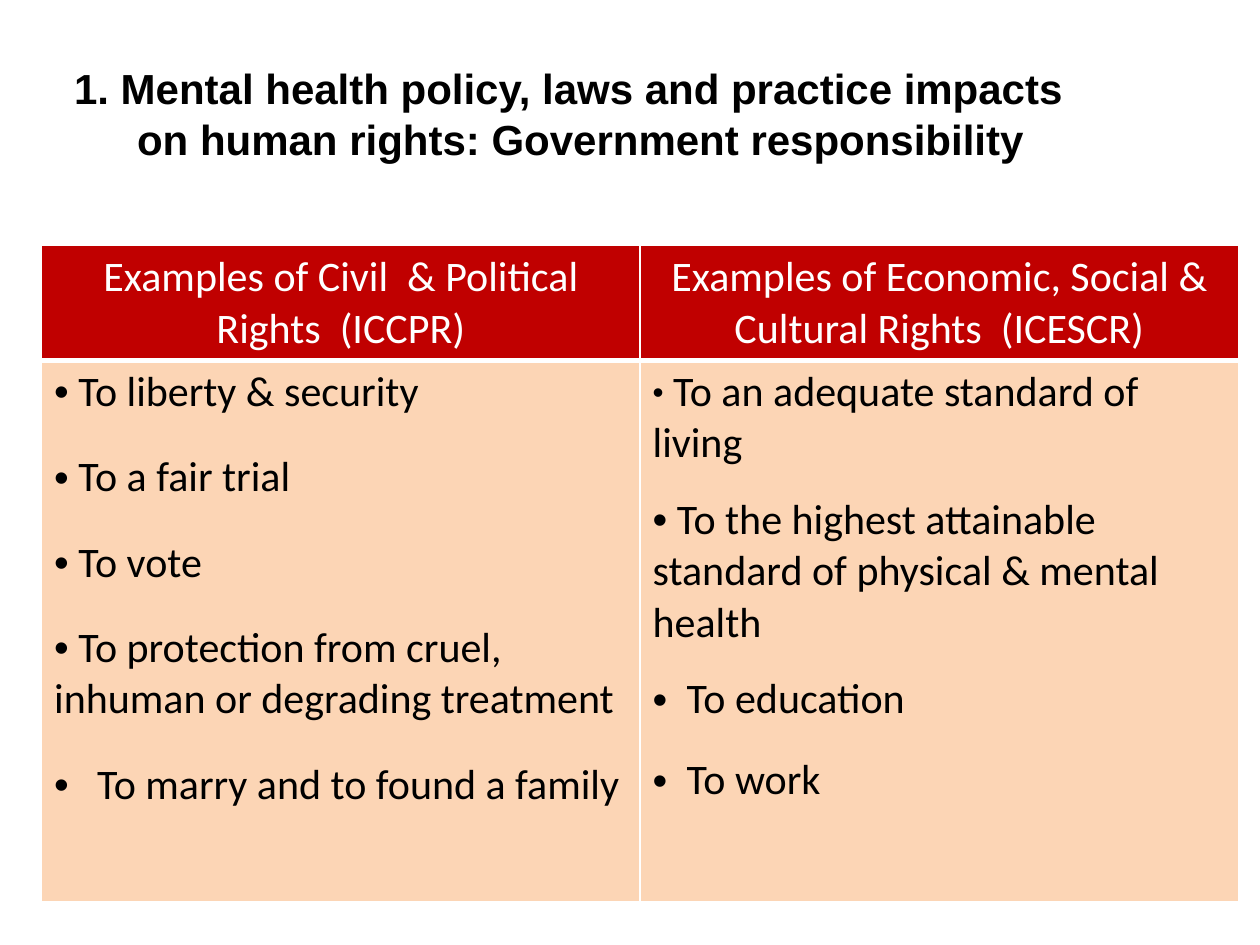
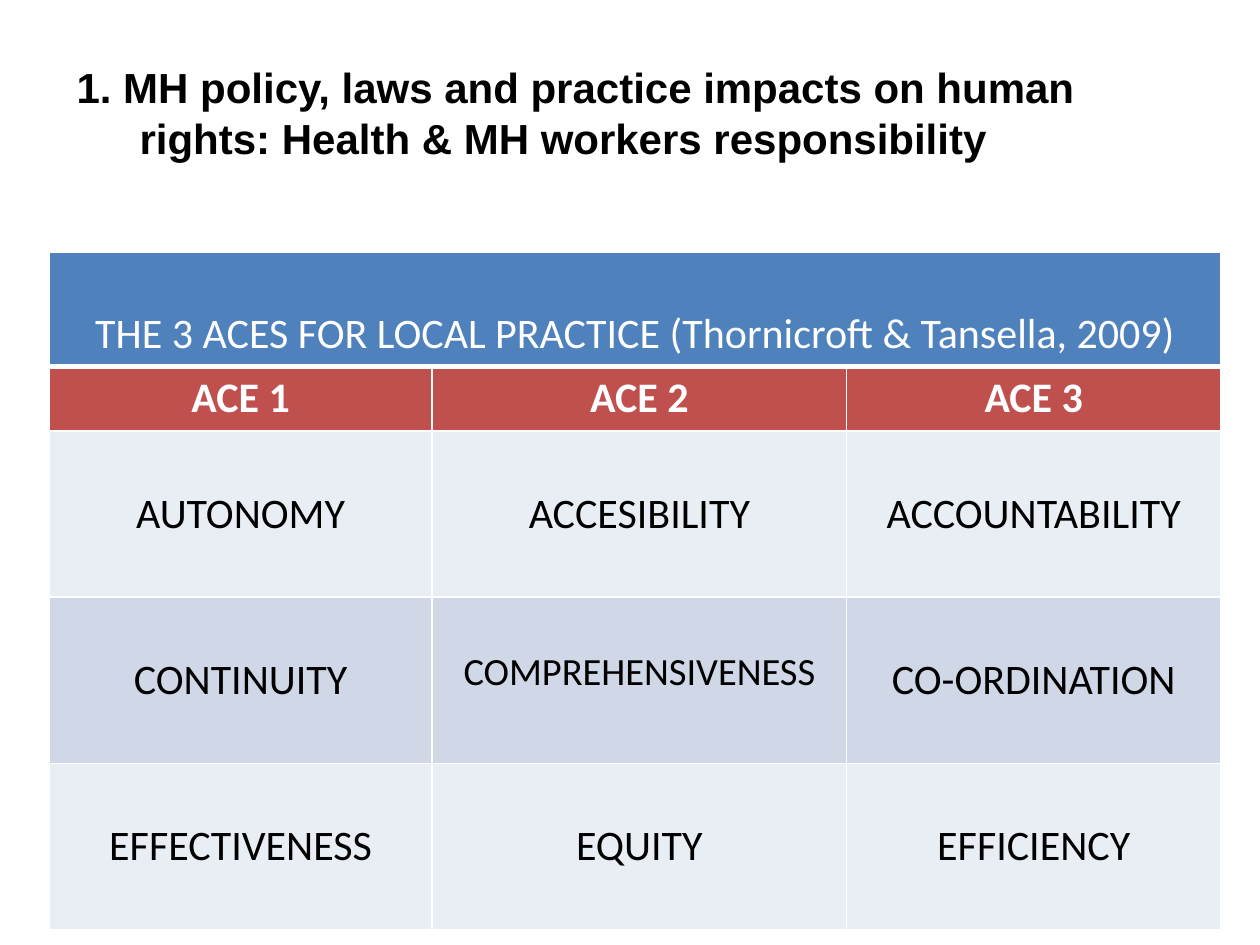
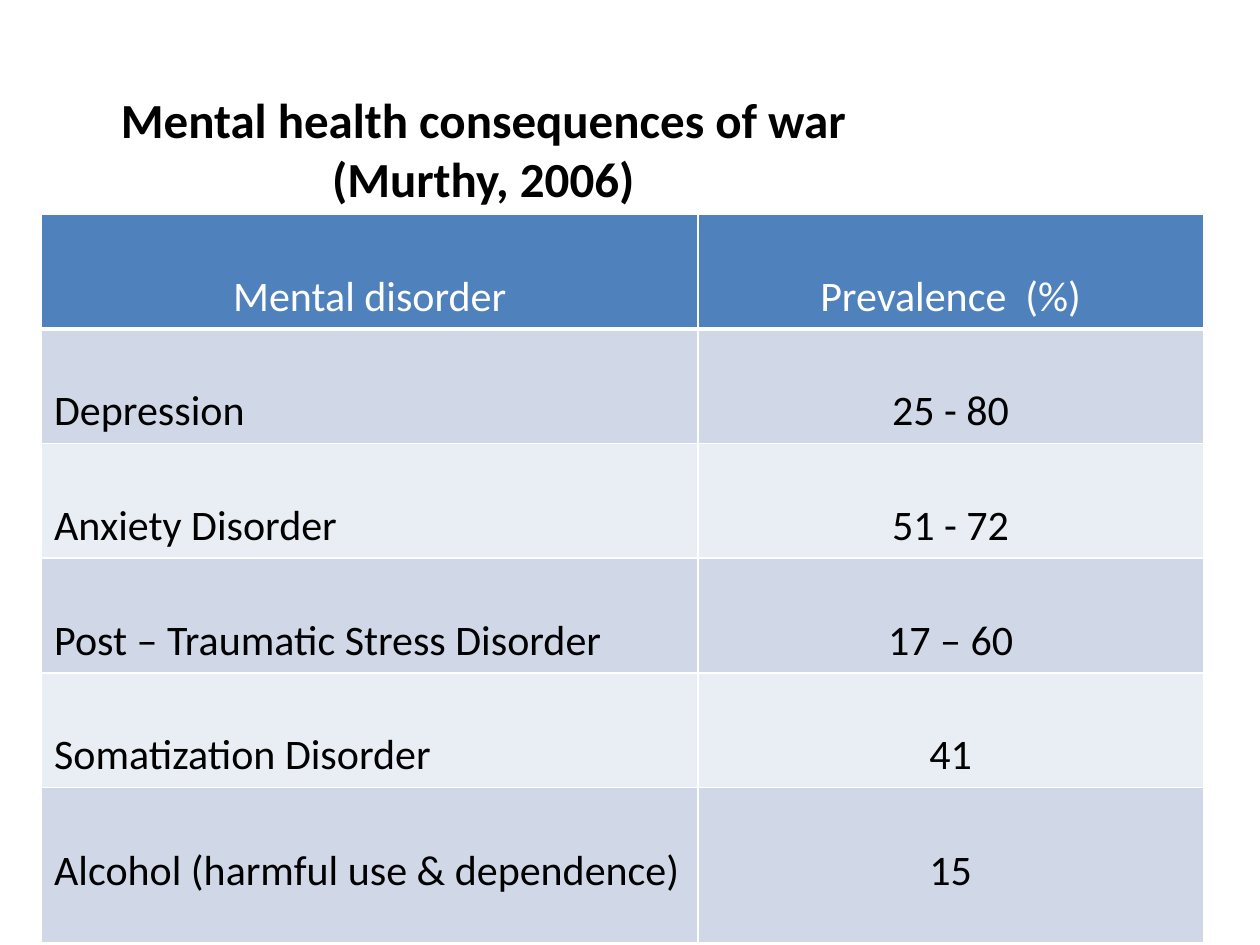
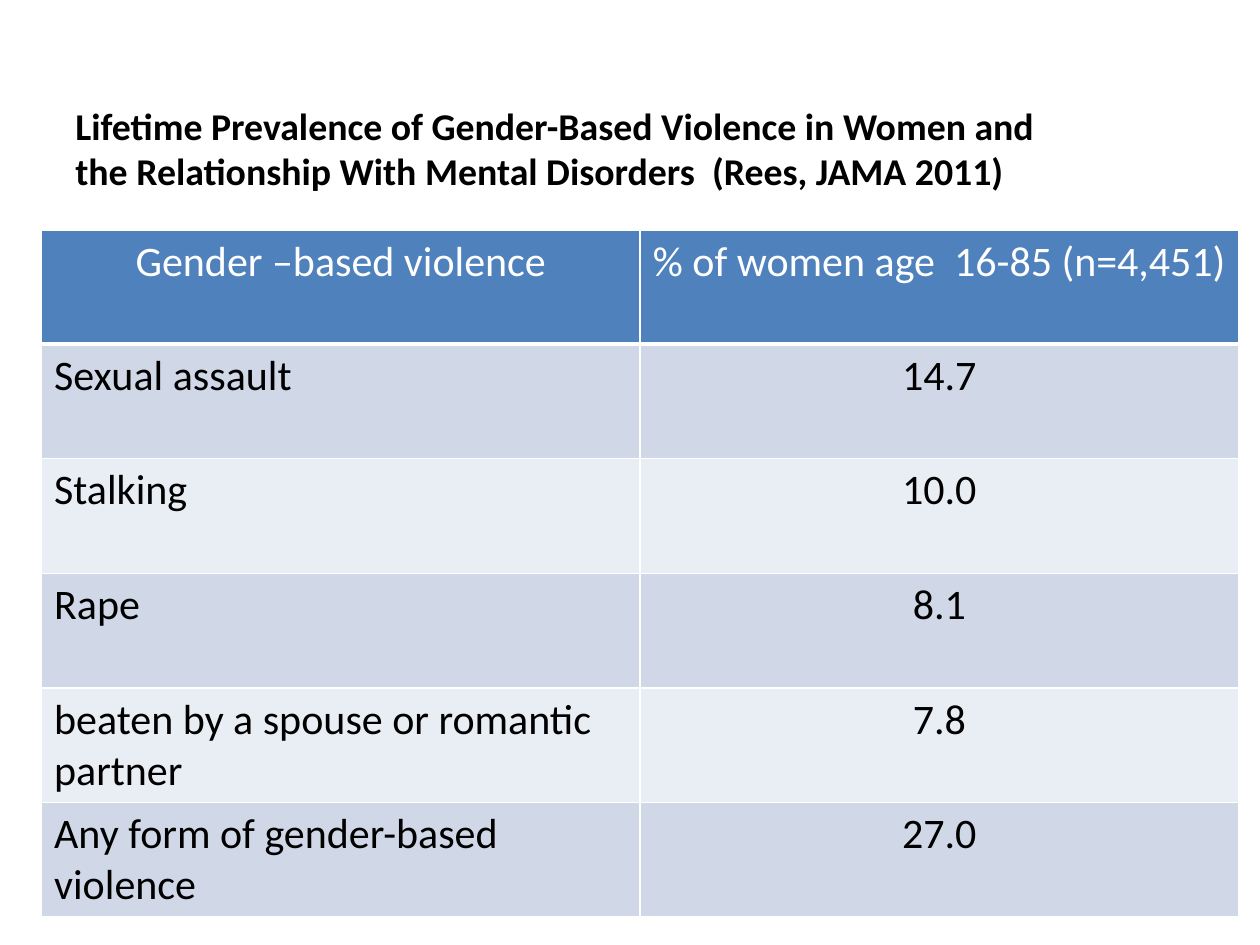
import pptx
import pptx.dml.color
import pptx.enum.text
import pptx.oxml.ns
import pptx.util
import lxml.etree

Inches = pptx.util.Inches
Pt = pptx.util.Pt
RGBColor = pptx.dml.color.RGBColor
ALIGN = pptx.enum.text.PP_ALIGN
ANCHOR = pptx.enum.text.MSO_ANCHOR
qn = pptx.oxml.ns.qn

BLACK = RGBColor(0x00, 0x00, 0x00)
WHITE = RGBColor(0xFF, 0xFF, 0xFF)
BLUE = RGBColor(0x4F, 0x81, 0xBD)
RED = RGBColor(0xC0, 0x50, 0x4D)
DARK_RED = RGBColor(0xC0, 0x00, 0x00)
PEACH = RGBColor(0xFC, 0xD5, 0xB5)
BAND_DARK = RGBColor(0xD0, 0xD8, 0xE8)
BAND_LIGHT = RGBColor(0xE9, 0xED, 0xF4)

BODY = {"name": "Calibri", "size": Pt(24), "bold": False, "color": BLACK}
HEADER = {**BODY, "color": WHITE}
SUBHEADER = {**HEADER, "bold": True}
NUMBERED_TITLE = {**BODY, "name": "Arial", "bold": True}


def write(paragraph, text, alignment, text_format):
    paragraph.alignment = alignment
    run = paragraph.add_run()
    run.text = text
    for name, value in text_format.items():
        if name == "color":
            run.font.color.rgb = value
        else:
            setattr(run.font, name, value)


def add_grid(slide, left, top, column_widths, row_heights, fills, anchors, texts):
    table = slide.shapes.add_table(
        len(row_heights), len(column_widths), Inches(left), Inches(top),
        Inches(sum(column_widths)), Inches(sum(row_heights))).table
    for column, width in zip(table.columns, column_widths):
        column.width = Inches(width)
    for row_index, (row, height) in enumerate(zip(table.rows, row_heights)):
        row.height = Inches(height)
        for column_index, cell in enumerate(row.cells):
            cell.fill.solid()
            cell.fill.fore_color.rgb = fills[row_index]
            cell.vertical_anchor = anchors[row_index]
            properties = cell._tc.get_or_add_tcPr()
            for position, side in enumerate(("lnL", "lnR", "lnT", "lnB")):
                width = 3 if row_index == 0 and side == "lnB" else 1
                border = lxml.etree.Element(qn("a:" + side), w=str(Pt(width)))
                solid = lxml.etree.SubElement(border, qn("a:solidFill"))
                lxml.etree.SubElement(solid, qn("a:srgbClr"), val=str(WHITE))
                properties.insert(position, border)
            if row_index < len(texts) and column_index < len(texts[row_index]):
                text = texts[row_index][column_index]
                is_label = len(column_widths) == 2 and row_index > 0 and column_index == 0
                text_format = {BLUE: HEADER, DARK_RED: HEADER, RED: SUBHEADER}.get(fills[row_index], BODY)
                write(cell.text_frame.paragraphs[0], text,
                      ALIGN.LEFT if is_label else ALIGN.CENTER, text_format)
    return table


presentation = pptx.Presentation()
presentation.slide_width = Inches(10)
presentation.slide_height = Inches(7.5)

titles = [
    ("1. Mental health policy, laws and practice impacts on human rights: Government responsibility",
     (0.49, 0.45, 8.23, 0.91), ANCHOR.TOP, ALIGN.LEFT, NUMBERED_TITLE),
    ("1. MH policy, laws and practice impacts on human rights: Health & MH workers responsibility",
     (0.51, 0.44, 8.14, 0.91), ANCHOR.TOP, ALIGN.LEFT, NUMBERED_TITLE),
    ("Mental health consequences of war (Murthy, 2006)",
     (0.5, 0.55, 6.67, 1.25), ANCHOR.MIDDLE, ALIGN.CENTER,
     {**BODY, "size": Pt(28), "bold": True}),
    ("Lifetime Prevalence of Gender-Based Violence in Women and the Relationship With Mental Disorders  (Rees, JAMA 2011)",
     (0.5, 0.55, 7.89, 1.25), ANCHOR.MIDDLE, ALIGN.LEFT,
     {**BODY, "size": Pt(21.6), "bold": True}),
]
slides = []
for text, box, anchor, alignment, title_format in titles:
    slide = presentation.slides.add_slide(presentation.slide_layouts[6])
    text_frame = slide.shapes.add_textbox(*map(Inches, box)).text_frame
    text_frame.word_wrap = True
    text_frame.vertical_anchor = anchor
    paragraph = text_frame.paragraphs[0]
    if title_format is NUMBERED_TITLE:
        paragraph_properties = paragraph._p.get_or_add_pPr()
        paragraph_properties.set("marL", str(Inches(0.5)))
        paragraph_properties.set("indent", str(-Inches(0.5)))
    write(paragraph, text, alignment, title_format)
    slides.append(slide)
rights_slide, aces_slide, war_slide, violence_slide = slides

rights_table = add_grid(
    rights_slide, 0.33, 1.95, [4.75, 4.75], [0.91, 4.3],
    [DARK_RED, PEACH], [ANCHOR.TOP] * 2,
    [["Examples of Civil  & Political Rights  (ICCPR)",
      "Examples of Economic, Social & Cultural Rights  (ICESCR)"]])
rights = [
    [(" To liberty & security", 0, 0, 100),
     (" To a fair trial", 19.5, 0, 100),
     (" To vote", 19.5, 0, 100),
     (" To protection from cruel, inhuman or degrading treatment", 19.5, 0, 100),
     ("To marry and to found a family", 19.5, 0.34, 100)],
    [(" To an adequate standard of living", 0, 0, 75),
     (" To the highest attainable standard of physical & mental health", 14.6, 0, 100),
     ("To education", 14.6, 0.27, 100),
     ("To work", 17, 0.27, 100)],
]
for column_index, items in enumerate(rights):
    text_frame = rights_table.cell(1, column_index).text_frame
    for item_index, (text, space_before, indent, bullet_percent) in enumerate(items):
        paragraph = text_frame.add_paragraph() if item_index else text_frame.paragraphs[0]
        paragraph_properties = paragraph._p.get_or_add_pPr()
        paragraph_properties.set("marL", str(Inches(indent)))
        paragraph_properties.set("indent", str(-Inches(indent)))
        lxml.etree.SubElement(paragraph_properties, qn("a:buSzPct"), val=str(bullet_percent * 1000))
        lxml.etree.SubElement(paragraph_properties, qn("a:buFont"), typeface="Arial")
        lxml.etree.SubElement(paragraph_properties, qn("a:buChar"), char="•")
        paragraph.space_before = Pt(space_before)
        write(paragraph, text, ALIGN.LEFT, BODY)

aces_table = add_grid(
    aces_slide, 0.39, 2, [3.04, 3.29, 2.97], [0.91, 0.51, 1.32, 1.32, 1.32],
    [BLUE, RED, BAND_LIGHT, BAND_DARK, BAND_LIGHT],
    [ANCHOR.BOTTOM, ANCHOR.TOP] + [ANCHOR.MIDDLE] * 3,
    [["THE 3 ACES FOR LOCAL PRACTICE (Thornicroft & Tansella, 2009)"],
     ["ACE 1", "ACE 2", "ACE 3"],
     ["AUTONOMY", "ACCESIBILITY", "ACCOUNTABILITY"],
     ["CONTINUITY", "COMPREHENSIVENESS", "CO-ORDINATION"],
     ["EFFECTIVENESS", "EQUITY", "EFFICIENCY"]])
aces_table.cell(0, 0).merge(aces_table.cell(0, 2))
comprehensiveness_cell = aces_table.cell(3, 1)
comprehensiveness_cell.margin_bottom = Inches(0.17)
comprehensiveness_cell.text_frame.paragraphs[0].runs[0].font.size = Pt(22)

war_table = add_grid(
    war_slide, 0.33, 1.7, [5.21, 4.01], [0.91] * 5 + [1.23],
    [BLUE] + [BAND_DARK, BAND_LIGHT] * 2 + [BAND_DARK],
    [ANCHOR.BOTTOM] * 5 + [ANCHOR.MIDDLE],
    [["Mental disorder", "Prevalence  (%)"],
     ["Depression", "25 - 80"],
     ["Anxiety Disorder", "51 - 72"],
     ["Post – Traumatic Stress Disorder", "17 – 60"],
     ["Somatization Disorder", "41"],
     ["Alcohol (harmful use & dependence)", "15"]])
for cell in war_table.rows[5].cells:
    cell.margin_top = Inches(0.15)

add_grid(
    violence_slide, 0.33, 1.83, [4.75, 4.75], [0.9] + [0.91] * 5,
    [BLUE] + [BAND_DARK, BAND_LIGHT] * 2 + [BAND_DARK], [ANCHOR.TOP] * 6,
    [["Gender –based violence", "% of women age  16-85 (n=4,451)"],
     ["Sexual assault", "14.7"],
     ["Stalking", "10.0"],
     ["Rape", "8.1"],
     ["beaten by a spouse or romantic partner", "7.8"],
     ["Any form of gender-based violence", "27.0"]])

presentation.save("out.pptx")
